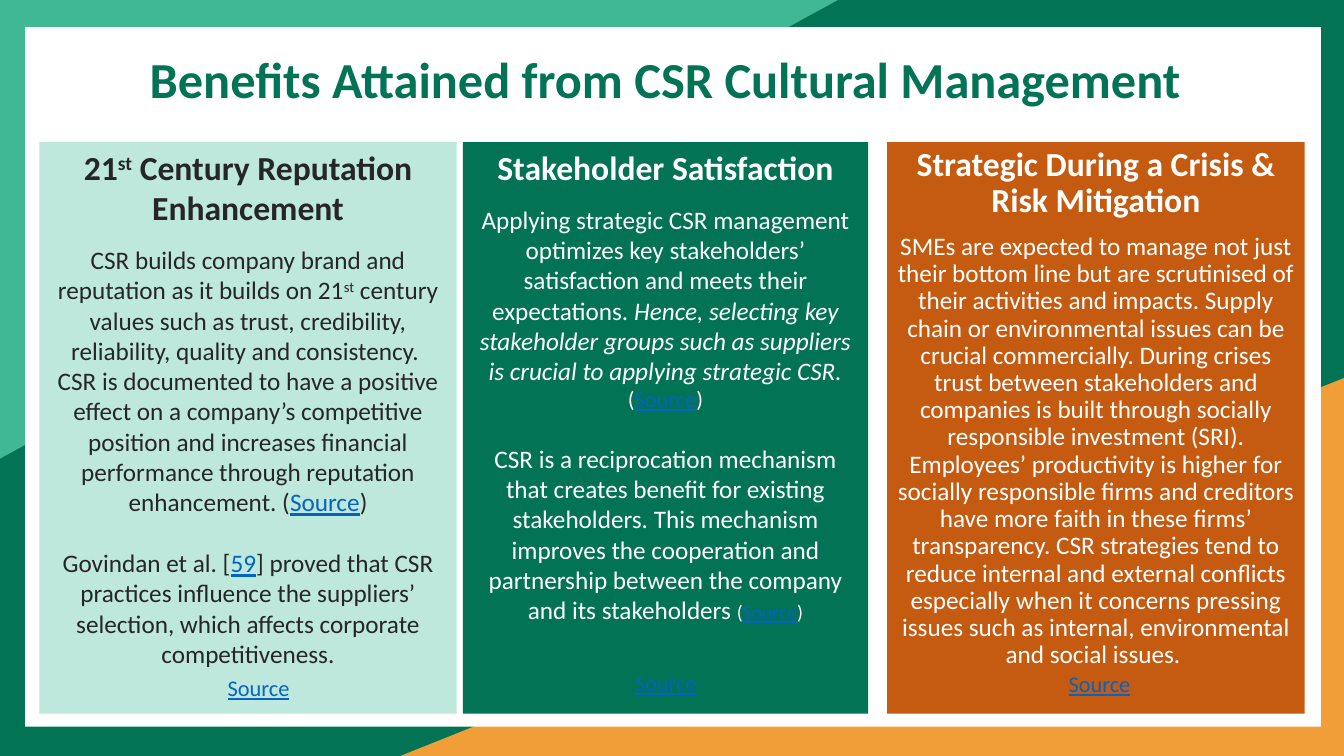
from pptx import Presentation
from pptx.dml.color import RGBColor
from pptx.enum.shapes import MSO_SHAPE
from pptx.enum.text import MSO_ANCHOR, PP_ALIGN
from pptx.util import Inches, Pt

RECTANGLE, TRIANGLE = MSO_SHAPE.RECTANGLE, MSO_SHAPE.ISOSCELES_TRIANGLE
TOP, CENTER = MSO_ANCHOR.TOP, PP_ALIGN.CENTER

THEME = {
    "font": "Calibri",
    "green": "027354", "orange": "F29E38", "mint": "40B894", "white": "FFFFFF",
    "pale": "BEE8DB", "rust": "C55A11", "dark": "262626", "link": "0563C1",
    "title": 36, "heading": 24, "body": 18, "source": 16, "small": 14,
}

# Content: a paragraph is (space before in points, spans);
# a span is (text, size name, set of styles)
TITLE = "Benefits Attained from CSR Cultural Management"
REPUTATION = [
    (0, [("21", "heading", {"bold"}), ("st", "heading", {"bold", "super"}),
         (" Century Reputation Enhancement", "heading", {"bold"})]),
    (12, [("CSR builds company brand and reputation as it builds on 21", "body", set()),
          ("st", "body", {"super"}),
          (" century values such as trust, credibility, reliability, quality "
           "and consistency. ", "body", set())]),
    (0, [("CSR is documented to have a positive effect on a company’s competitive "
          "position and increases financial performance through reputation "
          "enhancement. (", "body", set()),
         ("Source", "body", {"link"}), (")", "body", set())]),
    (22, [("Govindan et al. [", "body", set()), ("59", "body", {"link"}),
          ("] proved that CSR practices influence the suppliers’ selection, which "
           "affects corporate competitiveness.", "body", set())]),
]
STAKEHOLDERS = [
    (0, [("Stakeholder Satisfaction", "heading", {"bold"})]),
    (12, [("Applying strategic CSR management optimizes key stakeholders’ satisfaction "
           "and meets their expectations. ", "body", set()),
          ("Hence, selecting key stakeholder groups such as suppliers is crucial to "
           "applying strategic CSR. ", "body", {"italic"}),
          ("(", "source", set()), ("Source", "source", {"link"}),
          (")", "source", set())]),
    (22, [("CSR is a reciprocation mechanism that creates benefit for existing "
           "stakeholders. This mechanism improves the cooperation and partnership "
           "between the company and its stakeholders ", "body", set()),
          ("(", "small", set()), ("Source", "small", {"link"}),
          (")", "small", set())]),
]
CRISIS = [
    (10, [("Strategic During a Crisis & Risk Mitigation", "heading", {"bold"})]),
    (10, [("SMEs are expected to manage not just their bottom line but are scrutinised "
           "of their activities and impacts. Supply chain or environmental issues can "
           "be crucial commercially. During crises trust between stakeholders and "
           "companies is built through socially responsible investment (SRI). "
           "Employees’ productivity is higher for socially responsible firms and "
           "creditors have more faith in these firms’ transparency. CSR strategies "
           "tend to reduce internal and external conflicts especially when it concerns "
           "pressing issues such as internal, environmental and social issues. ",
           "body", set())]),
]
SOURCE = [(0, [("Source", "source", {"link"})])]

# (paragraphs, left, width, fill, text colour, line spacing, source left, source top)
PANELS = [
    (REPUTATION, 0.39, 4.14, "pale", "dark", 1, 1.41, 6.64),
    (STAKEHOLDERS, 4.59, 4.02, "green", "white", 1, 5.45, 6.59),
    (CRISIS, 8.8, 4.14, "rust", "white", 0.9, 9.75, 6.6),
]
PANEL_TOP, PANEL_HEIGHT = 1.41, 5.67
SOURCE_WIDTH, SOURCE_HEIGHT = 2.31, 0.37

# (shape, left, top, width, height, fill, rotation)
BACKDROP = [
    (RECTANGLE, 0, 0, 13.33, 7.5, "green", 0),
    (TRIANGLE, 3.97, 3.75, 9.36, 3.75, "orange", 0),
    (TRIANGLE, 0, 0, 8.31, 4.55, "mint", 180),
    (RECTANGLE, 0.25, 0.27, 12.85, 6.94, "white", 0),
]


def color(name):
    return RGBColor.from_string(THEME[name])


def add_block(page, kind, left, top, width, height, fill):
    block = page.shapes.add_shape(
        kind, Inches(left), Inches(top), Inches(width), Inches(height))
    block.shadow.inherit = False
    block.fill.solid()
    block.fill.fore_color.rgb = color(fill)
    block.line.fill.background()
    return block


def add_label(page, left, top, width, height):
    return page.shapes.add_textbox(
        Inches(left), Inches(top), Inches(width), Inches(height))


def write(box, paragraphs, text_color, line_spacing=1):
    frame = box.text_frame
    frame.word_wrap = True
    frame.vertical_anchor = TOP
    for index, (space, spans) in enumerate(paragraphs):
        para = frame.add_paragraph() if index else frame.paragraphs[0]
        para.alignment = CENTER
        para.line_spacing = line_spacing
        para.space_before = Pt(space)
        for text, size, styles in spans:
            span = para.add_run()
            span.text = text
            span.font.name = THEME["font"]
            span.font.size = Pt(THEME[size])
            span.font.bold = "bold" in styles
            span.font.italic = "italic" in styles
            span.font.underline = "link" in styles
            span.font.color.rgb = color("link" if "link" in styles else text_color)
            if "super" in styles:
                span._r.get_or_add_rPr().set("baseline", "30000")


def main():
    deck = Presentation()
    deck.slide_width, deck.slide_height = Inches(13.33), Inches(7.5)
    page = deck.slides.add_slide(deck.slide_layouts[6])

    # Coloured corners and white sheet
    for kind, left, top, width, height, fill, rotation in BACKDROP:
        block = add_block(page, kind, left, top, width, height, fill)
        block.rotation = rotation
        if kind == TRIANGLE:
            block.adjustments[0] = 1

    # Title
    title = add_label(page, 0.86, 0.31, 11.48, 1.23)
    write(title, [(0, [(TITLE, "title", {"bold"})])], "green", 1.2)

    # Benefit panels, each with its source label
    for paragraphs, left, width, fill, ink, spacing, source_left, source_top in PANELS:
        panel = add_block(page, RECTANGLE, left, PANEL_TOP, width, PANEL_HEIGHT, fill)
        write(panel, paragraphs, ink, spacing)
        label = add_label(page, source_left, source_top, SOURCE_WIDTH, SOURCE_HEIGHT)
        write(label, SOURCE, ink)

    deck.save("out.pptx")


if __name__ == "__main__":
    main()
